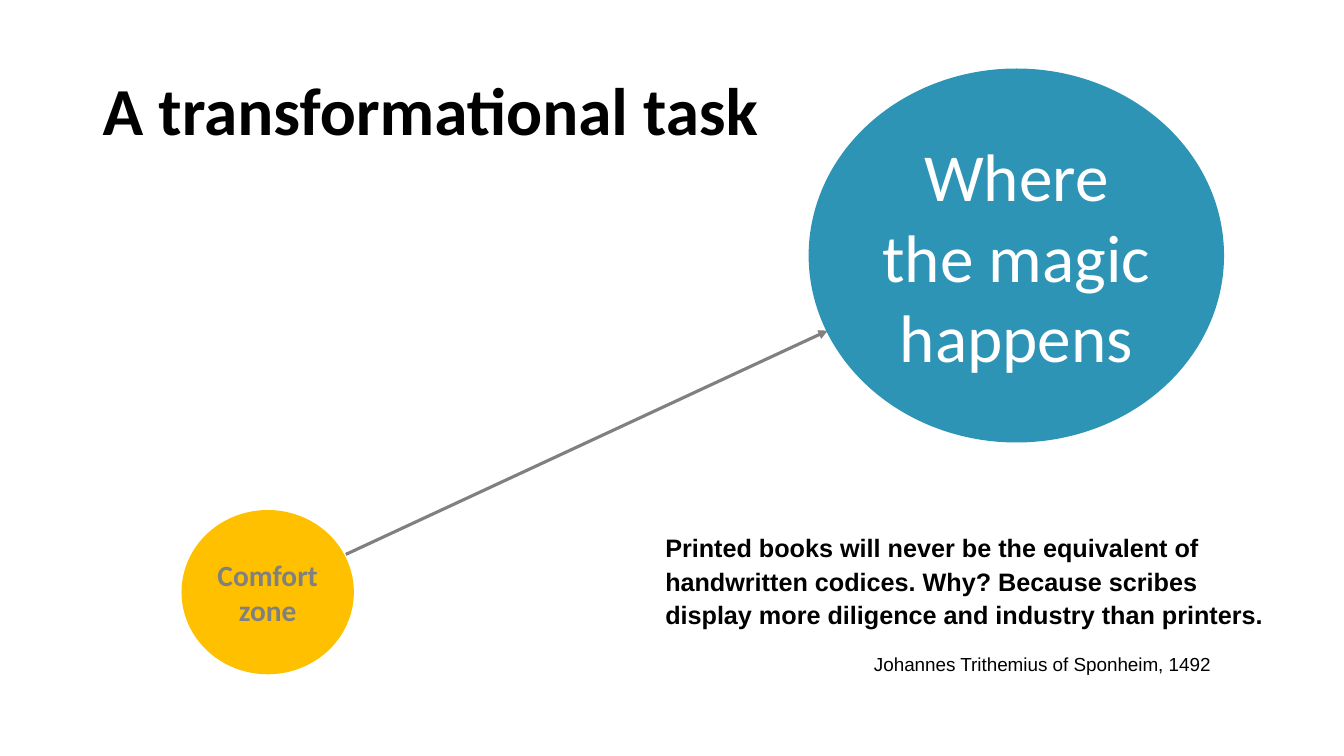
from lxml import etree
from pptx import Presentation, util as u
from pptx.dml.color import RGBColor
from pptx.enum import shapes, text
from pptx.oxml.ns import qn

# Content
COLORS = {"black": "000000", "white": "FFFFFF", "grey": "808080",
          "amber": "FFC000", "blue": "2E94B6"}
TITLE = "A transformational task"
QUOTE = ["Printed books will never be the equivalent of handwritten codices. "
         "Why? Because scribes",
         "display more diligence and industry than printers."]
AUTHOR = "Johannes Trithemius of Sponheim, 1492"
# Label, box in inches, fill, text format
ZONES = [
    ("Comfort zone", (1.8, 5.06, 1.71, 1.63), "amber",
     dict(size=21, color="grey", bold=True)),
    ("Where the magic happens", (8.02, 0.68, 4.12, 3.71), "blue",
     dict(size=48, color="white")),
]
TITLE_BOX = (0.92, 0.4, 11.5, 1.45)
QUOTE_BOX = (6.5, 5.2, 6.67, 1.57)
PATH_START, PATH_END = (3.43, 5.5), (8.21, 3.28)

deck = Presentation()
deck.slide_width, deck.slide_height = u.Inches(13.33), u.Inches(7.5)
slide = deck.slides.add_slide(deck.slide_layouts[6])


def inches(lengths):
    return [u.Inches(length) for length in lengths]


def write(frame, lines, size=18, color="black", bold=False, font="Calibri",
          align=text.PP_ALIGN.LEFT, anchor=text.MSO_ANCHOR.MIDDLE,
          spacing=None, before=0, indent=0):
    """Fill a text frame, or extend it when it already holds text."""
    frame.word_wrap = True
    frame.vertical_anchor = anchor
    for line in lines:
        para = frame.add_paragraph() if frame.text else frame.paragraphs[0]
        para.alignment, para.line_spacing = align, spacing
        para.space_before = u.Pt(before)
        if indent:
            para._p.get_or_add_pPr().set("marL", str(u.Inches(indent)))
        run = para.add_run()
        run.text = line
        run.font.name, run.font.size, run.font.bold = font, u.Pt(size), bold
        run.font.color.rgb = RGBColor.from_string(COLORS[color])


# Title
title = slide.shapes.add_textbox(*inches(TITLE_BOX))
write(title.text_frame, [TITLE], size=48, bold=True, spacing=0.9)

# Zones
for label, box, fill, style in ZONES:
    zone = slide.shapes.add_shape(shapes.MSO_SHAPE.OVAL, *inches(box))
    zone.shadow.inherit = False
    zone.fill.solid()
    zone.fill.fore_color.rgb = RGBColor.from_string(COLORS[fill])
    zone.line.fill.background()
    write(zone.text_frame, [label], align=text.PP_ALIGN.CENTER, **style)

# Arrow between the zones
arrow = slide.shapes.add_connector(shapes.MSO_CONNECTOR.STRAIGHT,
                                   *inches(PATH_START + PATH_END))
arrow.line.color.rgb = RGBColor.from_string(COLORS["grey"])
arrow.line.width = u.Pt(2.25)
etree.SubElement(arrow.line._get_or_add_ln(), qn("a:tailEnd"), type="triangle")
etree.SubElement(arrow._element.spPr, qn("a:effectLst"))

# Quotation and its author
quote = slide.shapes.add_textbox(*inches(QUOTE_BOX)).text_frame
write(quote, QUOTE, bold=True, font="Arial", spacing=u.Pt(24),
      anchor=text.MSO_ANCHOR.TOP)
write(quote, [AUTHOR], size=13.5, font="Arial", before=16, indent=2.07,
      anchor=text.MSO_ANCHOR.TOP)

deck.save("out.pptx")
